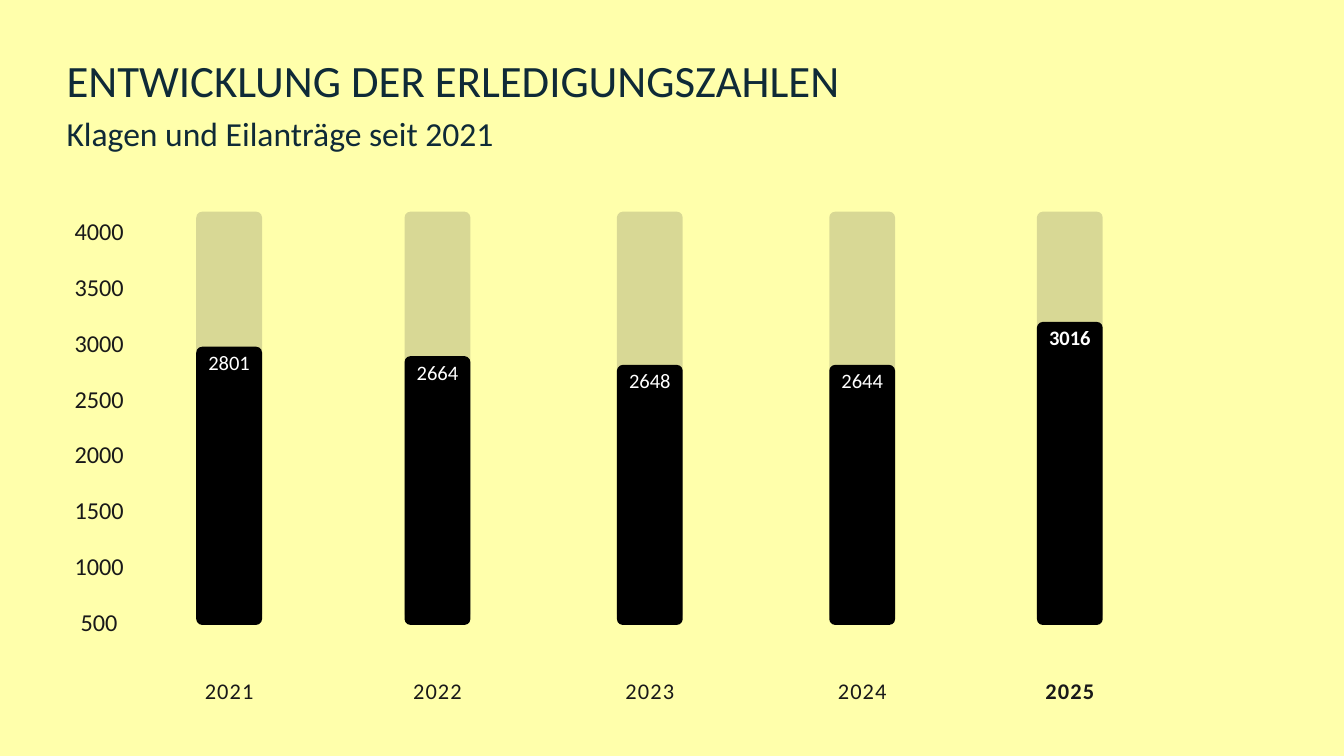
from pptx import Presentation
from pptx import util as u
from pptx.dml.color import RGBColor
from pptx.enum import shapes, text
from pptx.oxml import parse_xml
from pptx.oxml.ns import nsdecls

HEX = {"back": "FFFFAB", "head": "0F2A37", "label": "191919",
       "track": "404040", "bar": "000000", "value": "FFFFFF"}
FONT = "Calibri"
BARS = [("2021", "2801", 1.92, 2.01), ("2022", "2664", 5.02, 2.15),
        ("2023", "2648", 8.18, 2.28), ("2024", "2644", 11.34, 2.28),
        ("2025", "3016", 14.43, 1.64)]
TICKS = range(4000, 0, -500)
STEP, WIDE, BASE = 0.83, 0.98, 6.15


def tint(name):
    return RGBColor.from_string(HEX[name])


def write(shape, words, size, color, line=None, bold=False, align="CENTER", gap=0):
    frame = shape.text_frame
    frame.word_wrap = True
    frame.vertical_anchor = text.MSO_ANCHOR.TOP
    frame.margin_left = frame.margin_right = 0
    frame.margin_top = frame.margin_bottom = 0
    para = frame.paragraphs[0]
    run = para.add_run()
    run.text = words
    para.alignment = getattr(text.PP_ALIGN, align)
    if line:
        para.line_spacing = u.Pt(line)
    font = para.font
    font.name, font.size, font.bold = FONT, u.Pt(size), bold
    font.color.rgb = tint(color)
    if gap:
        run._r.get_or_add_rPr().set("spc", str(gap))


def label(slide, box, words, size, color, **style):
    shape = slide.shapes.add_textbox(*map(u.Inches, box))
    write(shape, words, size, color, **style)


def column(slide, box, color, alpha=None):
    shape = slide.shapes.add_shape(
        shapes.MSO_SHAPE.ROUNDED_RECTANGLE, *map(u.Inches, box))
    shape.adjustments[0] = 0.09
    shape.shadow.inherit = False
    shape.line.fill.background()
    shape.fill.solid()
    shape.fill.fore_color.rgb = tint(color)
    if alpha:
        fill = shape._element.spPr.find(".//{*}srgbClr")
        fill.append(parse_xml(f'<a:alpha {nsdecls("a")} val="{alpha * 1000}"/>'))


def header(slide, left, top, width):
    title = slide.shapes.title
    title.left, title.top = u.Inches(left), u.Inches(top)
    title.width, title.height = u.Inches(width), u.Inches(1.09)
    write(title, "ENTWICKLUNG DER ERLEDIGUNGSZAHLEN", 48, "head",
          line=86.4, align="LEFT")
    label(slide, (left, top + 1.26, width, 0.61), "Klagen und Eilanträge seit 2021",
          36, "head", line=45.5, align="LEFT")


def axis(slide, left, top):
    for row, tick in enumerate(TICKS):
        label(slide, (left, top + row * STEP, 0.95, 0.5), str(tick),
              26, "label", line=36.4)


def columns(slide, left, top):
    for year, value, x, y in BARS:
        bold = year == BARS[-1][0]
        x += left
        column(slide, (x, top, WIDE, BASE - 0.08), "track", 20)
        column(slide, (x, top + y, WIDE, BASE - y), "bar")
        label(slide, (x, top + y + 0.05, WIDE, 0.37), value, 22, "value", bold=bold)
        label(slide, (x, top + 6.83, WIDE, 0.47), year, 24, "label",
              line=36, bold=bold, gap=120)


def main():
    deck = Presentation()
    deck.slide_width, deck.slide_height = u.Inches(20), u.Inches(11.25)
    slide = deck.slides.add_slide(deck.slide_layouts[5])
    slide.background.fill.solid()
    slide.background.fill.fore_color.rgb = tint("back")
    header(slide, 0.99, 0.39, 13.33)
    axis(slide, 1, 3.15)
    columns(slide, 1, 3.15)
    deck.save("out.pptx")


if __name__ == "__main__":
    main()
